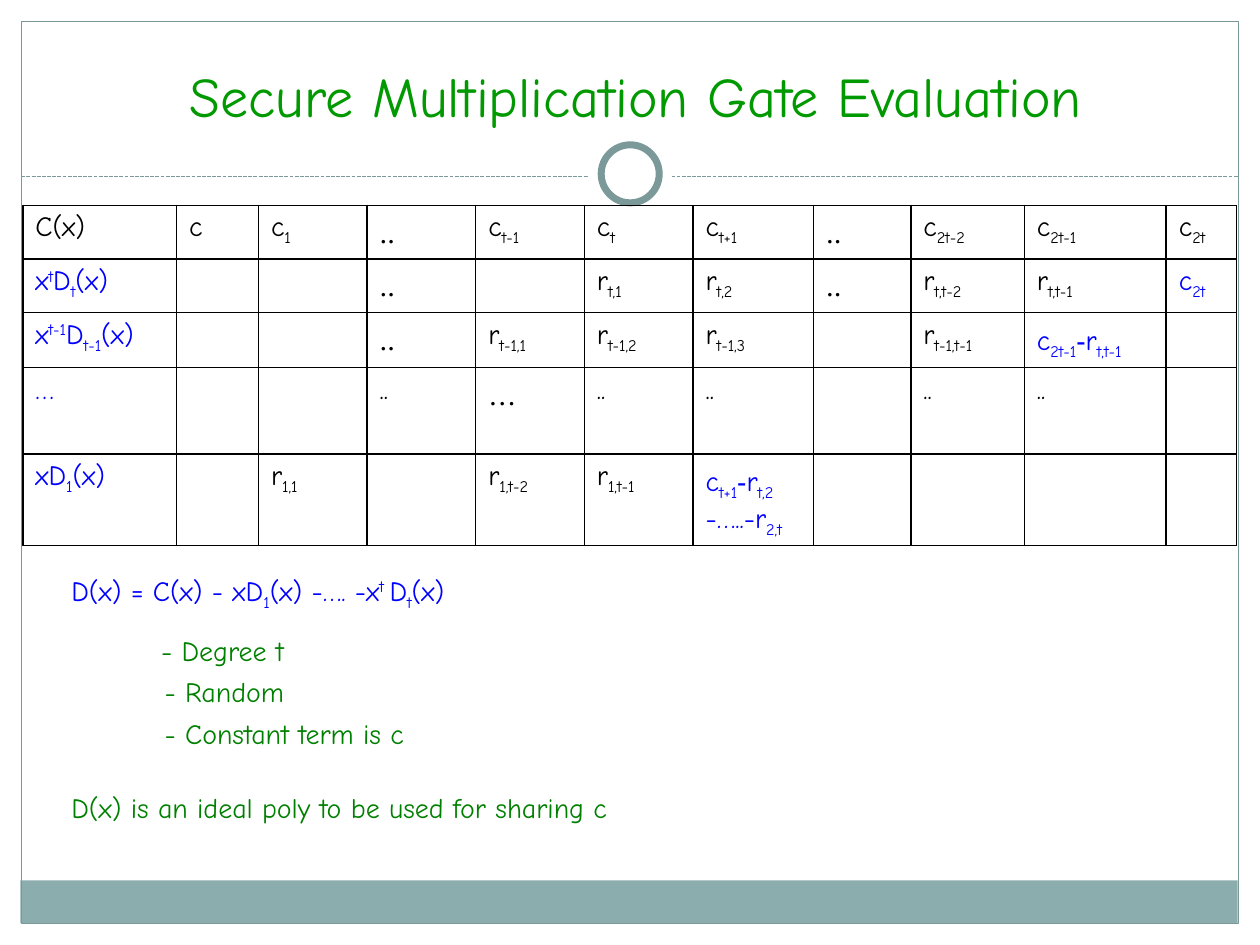
import pptx
import pptx.dml.color
import pptx.enum.dml
import pptx.enum.shapes
import pptx.enum.text
import pptx.oxml
import pptx.oxml.ns
import pptx.util

Cm, Pt = pptx.util.Cm, pptx.util.Pt
SHAPE = pptx.enum.shapes.MSO_SHAPE
BODY_FONT, DOTS_FONT = "Comic Neue", "TeX Gyre Schola"
BLACK, BLUE, GREEN, TITLE_GREEN = "000000", "0000FF", "008000", "009900"
WHITE, BAND, FRAME = "FFFFFF", "8CADAE", "7C999A"

# Content: "|" separates runs; _ is subscript, ^ superscript, ~ the dots font
TITLE = "Secure Multiplication Gate Evaluation"
GRID = [
    ["C(x)", "c", "c|_1", "~..", "c|_t-1", "c|_t", "c|_t+1", "~..",
     "c|_2t-2", "c|_2t-1", "c|_2t"],
    ["x|^t|D|_t|(x)", "", "", "~..", "", "r|_t,1", "r|_t,2", "~..",
     "r|_t,t-2", "r|_t,t-1", "c|_2t"],
    ["x|^t-1|D|_t-1|(x)", "", "", "~..", "r|_t-1,1", "r|_t-1,2", "r|_t-1,3", "",
     "r|_t-1,t-1", "c|_2t-1|~-|r|_t,t-1", ""],
    ["…", "", "", "..", "~…", "..", "..", "", "..", "..", ""],
    ["xD|_1|(x)", "", "r|_1,1", "", "r|_1,t-2", "r|_1,t-1",
     "c|_t+1|~-|r|_t,2| -…..-r|_2,t", "", "", "", ""],
]
BLUE_CELLS = {(1, 0), (2, 0), (3, 0), (4, 0), (1, 10), (2, 9), (4, 6)}
COLUMN_WIDTHS = [3.1, 1.65, 2.19, 2.19, 2.19, 2.19, 2.43, 1.96, 2.29, 2.86, 1.42]
ROW_HEIGHTS = [1.08, 1.08, 1.11, 1.74, 1.85]

# Text, left, top, width, colour, wrapped
NOTES = [
    ("D(x) = C(x) - xD|_1|(x) -…. -x|^t |D|_t|(x)", 1.19, 11.43, 8.92, BLUE, True),
    ("- Degree t", 3.0, 12.65, 3.28, GREEN, False),
    ("- Random", 3.07, 13.47, 2.95, GREEN, False),
    ("- Constant term is c", 3.07, 14.33, 5.82, GREEN, False),
    ("D(x) is an ideal poly to be used for sharing c", 1.19, 15.82, 12.24, GREEN, False),
]


def rgb(value):
    return pptx.dml.color.RGBColor.from_string(value)


def write(paragraph, marked, size, color):
    font = paragraph.font
    font.size, font.name, font.color.rgb = Pt(size), BODY_FONT, rgb(color)
    for part in filter(None, marked.split("|")):
        mark = part[0] if part[0] in "_^~" else ""
        run = paragraph.add_run()
        run.text = part[len(mark):]
        if mark == "~":
            run.font.name = DOTS_FONT
        elif mark:
            baseline = "-25000" if mark == "_" else "30000"
            run._r.get_or_add_rPr().set("baseline", baseline)


def add_plain(kind, left, top, width, height, fill=None, line=None, weight=0.75):
    shape = slide.shapes.add_shape(kind, Cm(left), Cm(top), Cm(width), Cm(height))
    shape.shadow.inherit = False
    if fill:
        shape.fill.solid()
        shape.fill.fore_color.rgb = rgb(fill)
    else:
        shape.fill.background()
    if line:
        shape.line.color.rgb = rgb(line)
        shape.line.width = Pt(weight)
    else:
        shape.line.fill.background()


def add_text(marked, left, top, width, height, size, color, wrap=True):
    box = slide.shapes.add_textbox(Cm(left), Cm(top), Cm(width), Cm(height))
    box.text_frame.word_wrap = wrap
    write(box.text_frame.paragraphs[0], marked, size, color)
    return box.text_frame


def add_borders(cell):
    properties = cell._tc.get_or_add_tcPr()
    for position, side in enumerate(("lnL", "lnR", "lnT", "lnB")):
        properties.insert(position, pptx.oxml.parse_xml(
            f'<a:{side} {pptx.oxml.ns.nsdecls("a")} w="12700"><a:solidFill>'
            f'<a:srgbClr val="{BLACK}"/></a:solidFill></a:{side}>'))


deck = pptx.Presentation()
deck.slide_width, deck.slide_height = Cm(25.4), Cm(19.05)
slide = deck.slides.add_slide(deck.slide_layouts[6])

# Bottom band and page frame
add_plain(SHAPE.RECTANGLE, 0.41, 17.75, 24.54, 0.86, fill=BAND)
add_plain(SHAPE.RECTANGLE, 0.43, 0.43, 24.54, 18.19, line=FRAME)

# Dashed divider with a ring in its middle
divider = slide.shapes.add_connector(
    pptx.enum.shapes.MSO_CONNECTOR.STRAIGHT, Cm(0.43), Cm(3.56), Cm(24.97), Cm(3.56))
divider.line.color.rgb = rgb(FRAME)
divider.line.width = Pt(0.75)
divider.line.dash_style = pptx.enum.dml.MSO_LINE.SQUARE_DOT
divider._element.spPr.append(
    pptx.oxml.parse_xml(f'<a:effectLst {pptx.oxml.ns.nsdecls("a")}/>'))
add_plain(SHAPE.OVAL, 11.85, 2.67, 1.7, 1.7, fill=WHITE)
add_plain(SHAPE.OVAL, 12.12, 2.92, 1.17, 1.17, fill=WHITE, line=FRAME, weight=4)

# Title
heading = add_text(TITLE, 1.19, 0.84, 23.27, 1.88, 32, TITLE_GREEN)
heading.vertical_anchor = pptx.enum.text.MSO_ANCHOR.BOTTOM
heading.paragraphs[0].alignment = pptx.enum.text.PP_ALIGN.CENTER

# Coefficient table
coefficients = slide.shapes.add_table(
    len(GRID), len(COLUMN_WIDTHS), Cm(0.46), Cm(4.14),
    Cm(sum(COLUMN_WIDTHS)), Cm(sum(ROW_HEIGHTS))).table
coefficients.first_row = coefficients.horz_banding = False
for column, width in zip(coefficients.columns, COLUMN_WIDTHS):
    column.width = Cm(width)
for r, (terms, height) in enumerate(zip(GRID, ROW_HEIGHTS)):
    coefficients.rows[r].height = Cm(height)
    for c, term in enumerate(terms):
        cell = coefficients.cell(r, c)
        cell.fill.background()
        add_borders(cell)
        color = BLUE if (r, c) in BLUE_CELLS else BLACK
        write(cell.text_frame.paragraphs[0], term, 16, color)

# Notes under the table
for note, left, top, width, color, wrap in NOTES:
    frame = add_text(note, left, top, width, 0.94, 16, color, wrap)
    frame.auto_size = pptx.enum.text.MSO_AUTO_SIZE.SHAPE_TO_FIT_TEXT

deck.save("out.pptx")
